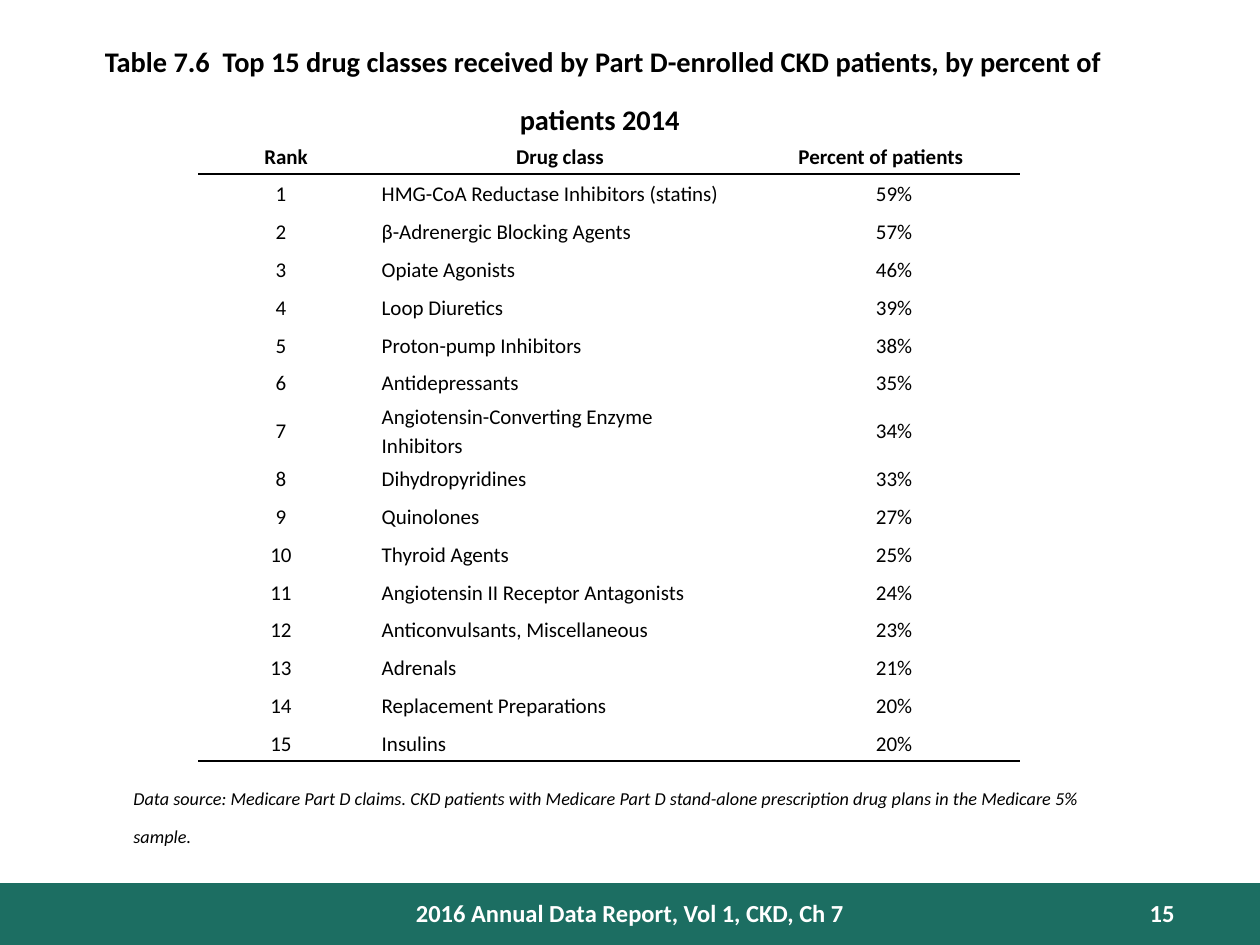
from dataclasses import dataclass

from lxml import etree
from pptx import Presentation
from pptx.dml.color import RGBColor
from pptx.enum.shapes import MSO_SHAPE
from pptx.enum.text import MSO_ANCHOR, MSO_AUTO_SIZE, PP_ALIGN
from pptx.oxml.ns import qn
from pptx.util import Inches, Pt

RECT = MSO_SHAPE.RECTANGLE
TOP, MIDDLE = MSO_ANCHOR.TOP, MSO_ANCHOR.MIDDLE
LEFT, CENTER, RIGHT = PP_ALIGN.LEFT, PP_ALIGN.CENTER, PP_ALIGN.RIGHT
NO_FIT = MSO_AUTO_SIZE.NONE


@dataclass(frozen=True)
class Theme:
    """Font, colours and type sizes of the slide."""
    font: str = "Calibri"
    ink: str = "000000"
    paper: str = "FFFFFF"
    band: str = "1C6E62"
    title: int = 28
    source: int = 18
    footer: int = 14
    table: int = 12


THEME = Theme()
HEADER = ("Rank", "Drug class", "Percent of patients ")
DRUG_CLASSES = [
    ("HMG-CoA Reductase Inhibitors (statins)", 59),
    ("β-Adrenergic Blocking Agents", 57),
    ("Opiate Agonists", 46),
    ("Loop Diuretics", 39),
    ("Proton-pump Inhibitors", 38),
    ("Antidepressants", 35),
    ("Angiotensin-Converting Enzyme Inhibitors", 34),
    ("Dihydropyridines", 33),
    ("Quinolones", 27),
    ("Thyroid Agents", 25),
    ("Angiotensin II Receptor Antagonists", 24),
    ("Anticonvulsants, Miscellaneous", 23),
    ("Adrenals", 21),
    ("Replacement Preparations", 20),
    ("Insulins", 20),
]
COL_WIDTHS = (1.38, 2.97, 2.16)
ROW_HEIGHT = 0.3
HEADER_STYLE = (CENTER, 0.07, 0.07)
BODY_STYLES = ((CENTER, 0, 0.08), (LEFT, 0.07, 0.07), (RIGHT, 0.08, 0.85))


def write(tf, text, size, color=THEME.ink, align=LEFT, bold=False,
          italic=False, raised=False):
    """Fill a text frame with one formatted paragraph."""
    tf.text = text
    tf.word_wrap = True
    p = tf.paragraphs[0]
    p.alignment = align
    for r in p.runs:
        r.font.name = THEME.font
        r.font.size = Pt(size)
        r.font.bold = bold
        r.font.italic = italic
        r.font.color.rgb = RGBColor.from_string(color)
        if raised:
            r.font._element.set("baseline", "30000")
    return p


def add_title(s, text):
    """Place the heading in the title placeholder."""
    sp = s.shapes.title
    sp.left, sp.top = Inches(0.73), Inches(0.25)
    sp.width, sp.height = Inches(8.11), Inches(0.73)
    tf = sp.text_frame
    write(tf, text, THEME.title, align=CENTER, bold=True, raised=True)
    tf.vertical_anchor = TOP
    tf.auto_size = NO_FIT


def add_text(s, box, text, size, **style):
    """Add a text box at left, top, width, height."""
    sp = s.shapes.add_textbox(*map(Inches, box))
    write(sp.text_frame, text, size, **style)


def add_band(s):
    """Add the coloured footer band."""
    sp = s.shapes.add_shape(RECT, 0, Inches(7.01), Inches(10), Inches(0.5))
    sp.shadow.inherit = False
    sp.fill.solid()
    sp.fill.fore_color.rgb = RGBColor.from_string(THEME.band)
    sp.line.fill.background()


def add_rule(cell, tag):
    """Draw a one-point border on a cell edge."""
    ln = etree.Element(qn(tag), w=str(Pt(1)))
    fill = etree.SubElement(ln, qn("a:solidFill"))
    etree.SubElement(fill, qn("a:srgbClr"), val=THEME.ink)
    cell._tc.get_or_add_tcPr().insert(0, ln)


def fill_cell(cell, text, style, bold):
    """Write and format one table cell."""
    align, left, right = style
    p = write(cell.text_frame, text, THEME.table, align=align, bold=bold)
    p.line_spacing = 1.15
    cell.margin_left, cell.margin_right = Inches(left), Inches(right)
    cell.margin_top = cell.margin_bottom = 0
    cell.vertical_anchor = MIDDLE
    cell.fill.background()


def add_drug_table(s):
    """Add the ranked table with rules below the header and last row."""
    rows = [HEADER] + [(str(rank), name, f"{share}%")
                       for rank, (name, share) in enumerate(DRUG_CLASSES, 1)]
    frame = s.shapes.add_table(
        len(rows), len(HEADER), Inches(1.58), Inches(1.08),
        Inches(sum(COL_WIDTHS)), Inches(ROW_HEIGHT * len(rows)))
    table = frame.table
    table.first_row = table.horz_banding = False
    for col, width in zip(table.columns, COL_WIDTHS):
        col.width = Inches(width)
    for i, values in enumerate(rows):
        table.rows[i].height = Inches(ROW_HEIGHT)
        styles = BODY_STYLES if i else (HEADER_STYLE,) * len(HEADER)
        for j, (text, style) in enumerate(zip(values, styles)):
            cell = table.cell(i, j)
            fill_cell(cell, text, style, bold=i == 0)
            if i in (0, len(rows) - 1):
                add_rule(cell, "a:lnB")
            if i == 1:
                add_rule(cell, "a:lnT")


def main():
    """Build and save the slide."""
    prs = Presentation()
    prs.slide_width, prs.slide_height = Inches(10), Inches(7.5)
    s = prs.slides.add_slide(prs.slide_layouts[5])
    add_band(s)
    add_text(s, (0.96, 6.17, 8.08, 0.5),
             "Data source: Medicare Part D claims. CKD patients with Medicare "
             "Part D stand-alone prescription drug plans in the Medicare 5% "
             "sample.", THEME.source, italic=True, raised=True)
    add_title(s, "Table 7.6  Top 15 drug classes received by Part D-enrolled "
                 "CKD patients, by percent of patients 2014 ")
    add_text(s, (3, 7.08, 4, 0.33), "2016 Annual Data Report, Vol 1, CKD, Ch 7",
             THEME.footer, color=THEME.paper, align=CENTER, bold=True)
    add_text(s, (8.42, 7.08, 1, 0.3), "15",
             THEME.footer, color=THEME.paper, align=RIGHT, bold=True)
    add_drug_table(s)
    prs.save("out.pptx")


if __name__ == "__main__":
    main()
